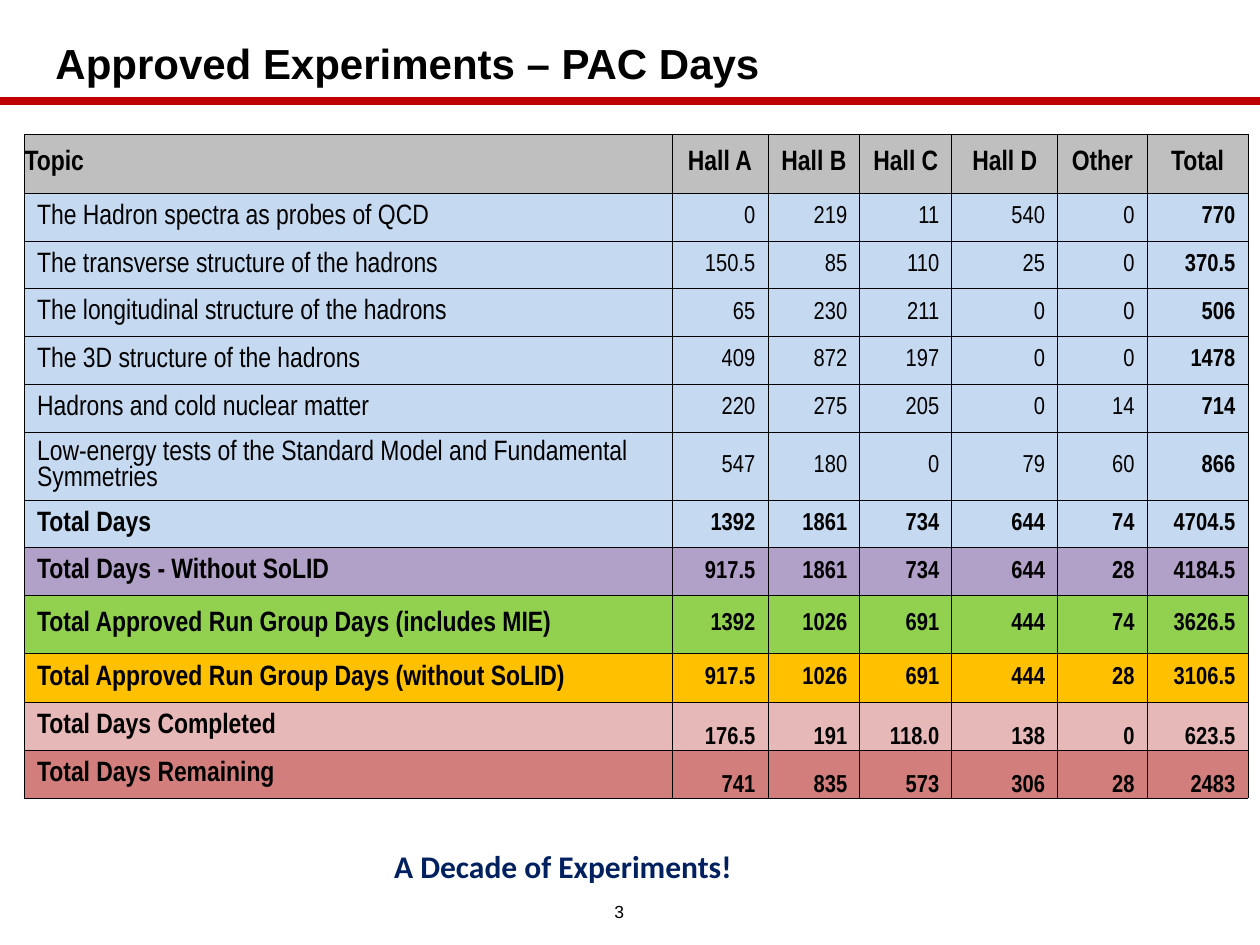
from lxml import etree
from pptx import Presentation
from pptx import util as u
from pptx.dml.color import RGBColor
from pptx.enum import shapes, text
from pptx.oxml import ns

BLACK = RGBColor(0x00, 0x00, 0x00)
RED = RGBColor(0xC0, 0x00, 0x00)
NAVY = RGBColor(0x00, 0x20, 0x60)
GREY = RGBColor(0xBF, 0xBF, 0xBF)
BLUE = RGBColor(0xC5, 0xD9, 0xF1)
PURPLE = RGBColor(0xB1, 0xA0, 0xC7)
GREEN = RGBColor(0x92, 0xD0, 0x50)
AMBER = RGBColor(0xFF, 0xC0, 0x00)
PINK = RGBColor(0xE6, 0xB8, 0xB7)
ROSE = RGBColor(0xD2, 0x7E, 0x7C)

LEFT, CENTER, RIGHT = text.PP_ALIGN.LEFT, text.PP_ALIGN.CENTER, text.PP_ALIGN.RIGHT
MIDDLE, BOTTOM, TOP = (text.MSO_ANCHOR.MIDDLE, text.MSO_ANCHOR.BOTTOM,
                       text.MSO_ANCHOR.TOP)

SLIDE_WIDTH, SLIDE_HEIGHT = u.Inches(10), u.Inches(7.5)

# Relative column widths and row heights of the table
COLUMNS = [5.14, 0.76, 0.73, 0.73, 0.84, 0.71, 0.8]
ROWS = [0.47] + [0.38] * 5 + [0.54] + [0.38] * 2 + [0.46, 0.39] + [0.38] * 2

HEADINGS = ["Topic", "Hall A", "Hall B", "Hall C", "Hall D", "Other", "Total"]
TOPICS = [
    ("The Hadron spectra as probes of QCD", "0 219 11 540 0 770"),
    ("The transverse structure of the hadrons", "150.5 85 110 25 0 370.5"),
    ("The longitudinal structure of the hadrons", "65 230 211 0 0 506"),
    ("The 3D structure of the hadrons", "409 872 197 0 0 1478"),
    ("Hadrons and cold nuclear matter", "220 275 205 0 14 714"),
    ("Low-energy tests of the Standard Model and Fundamental Symmetries",
     "547 180 0 79 60 866"),
]
TOTALS = [
    ("Total Days", "1392 1861 734 644 74 4704.5", BLUE, MIDDLE),
    ("Total Days - Without SoLID", "917.5 1861 734 644 28 4184.5", PURPLE, MIDDLE),
    ("Total Approved Run Group Days (includes MIE)",
     "1392 1026 691 444 74 3626.5", GREEN, MIDDLE),
    ("Total Approved Run Group Days (without SoLID)",
     "917.5 1026 691 444 28 3106.5", AMBER, MIDDLE),
    ("Total Days Completed", "176.5 191 118.0 138 0 623.5", PINK, BOTTOM),
    ("Total Days Remaining", "741 835 573 306 28 2483", ROSE, BOTTOM),
]


def percent_box(left, top, width, height):
    """Turn percentages of the slide into left, top, width and height."""
    return (int(SLIDE_WIDTH * left / 100), int(SLIDE_HEIGHT * top / 100),
            int(SLIDE_WIDTH * width / 100), int(SLIDE_HEIGHT * height / 100))


def write(frame, words, size, font="Arial Narrow", color=BLACK, bold=False,
          align=LEFT, spacing=None):
    paragraph = frame.paragraphs[0]
    paragraph.alignment = align
    paragraph.line_spacing = spacing
    run = paragraph.add_run()
    run.text = words
    run.font.size = u.Pt(size)
    run.font.name = font
    run.font.bold = bold
    run.font.color.rgb = color


def add_title(slide, box):
    title = slide.shapes.title
    title.left, title.top, title.width, title.height = box
    title.text_frame.vertical_anchor = MIDDLE
    write(title.text_frame, "Approved Experiments – PAC Days", 24, font="Arial",
          bold=True, spacing=0.9)


def add_rule(slide, box):
    left, top, width, height = box
    rule = slide.shapes.add_connector(shapes.MSO_CONNECTOR.STRAIGHT,
                                      left, top, left + width, top + height)
    rule.line.color.rgb = RED
    rule.line.width = u.Pt(4.5)
    properties = rule._element.spPr
    etree.SubElement(properties, ns.qn("a:effectLst"))


def add_label(slide, box, words, size, wrap=True, anchor=TOP, **style):
    label = slide.shapes.add_textbox(*box)
    label.text_frame.word_wrap = wrap
    label.text_frame.vertical_anchor = anchor
    write(label.text_frame, words, size, **style)


def add_borders(cell):
    properties = cell._tc.get_or_add_tcPr()
    for position, side in enumerate(("a:lnL", "a:lnR", "a:lnT", "a:lnB")):
        line = etree.Element(ns.qn(side), w=str(u.Pt(0.5)))
        fill = etree.SubElement(line, ns.qn("a:solidFill"))
        etree.SubElement(fill, ns.qn("a:srgbClr"), val=str(BLACK))
        properties.insert(position, line)


def fill_cell(cell, words, size, fill, anchor=MIDDLE, left=0, right=0, **style):
    cell.margin_left, cell.margin_right = u.Inches(left), u.Inches(right)
    cell.margin_top = cell.margin_bottom = 0
    cell.vertical_anchor = anchor
    cell.fill.solid()
    cell.fill.fore_color.rgb = fill
    add_borders(cell)
    write(cell.text_frame, words, size, **style)


def add_days_table(slide, box):
    table = slide.shapes.add_table(len(ROWS), len(COLUMNS), *box).table
    table.first_row = table.horz_banding = False
    for column, share in zip(table.columns, COLUMNS):
        column.width = int(box[2] * share / sum(COLUMNS))
    for row, share in zip(table.rows, ROWS):
        row.height = int(box[3] * share / sum(ROWS))

    # Heading row
    for index, heading in enumerate(HEADINGS):
        fill_cell(table.cell(0, index), heading, 16, GREY, bold=True,
                  align=CENTER if index else LEFT)

    # Topics are plain with a bold last column; totals are bold throughout
    records = [(*topic, BLUE, MIDDLE, False) for topic in TOPICS]
    records += [(*total, True) for total in TOTALS]
    for row, (name, days, fill, anchor, bold) in enumerate(records, start=1):
        fill_cell(table.cell(row, 0), name, 16, fill, left=0.1, bold=bold)
        for column, value in enumerate(days.split(), start=1):
            fill_cell(table.cell(row, column), value, 14, fill, anchor=anchor,
                      right=0.1, align=RIGHT,
                      bold=bold or column == len(COLUMNS) - 1)


def main():
    presentation = Presentation()
    presentation.slide_width, presentation.slide_height = SLIDE_WIDTH, SLIDE_HEIGHT
    slide = presentation.slides.add_slide(presentation.slide_layouts[5])

    # Heading
    add_rule(slide, percent_box(0, 10.67, 100, 0))
    add_title(slide, percent_box(3.4, 3.47, 92.6, 7.07))

    # Days by topic and hall
    add_days_table(slide, percent_box(1.95, 14.2, 97.1, 70.27))

    # Closing line and page number
    add_label(slide, percent_box(30.3, 88.93, 29, 5.33), "A Decade of Experiments!",
              18, wrap=False, font="Calibri", color=NAVY, bold=True)
    add_label(slide, percent_box(46.2, 94.27, 5.9, 4.4), "3", 10, anchor=MIDDLE,
              font="Arial", align=CENTER)

    presentation.save("out.pptx")


if __name__ == "__main__":
    main()
